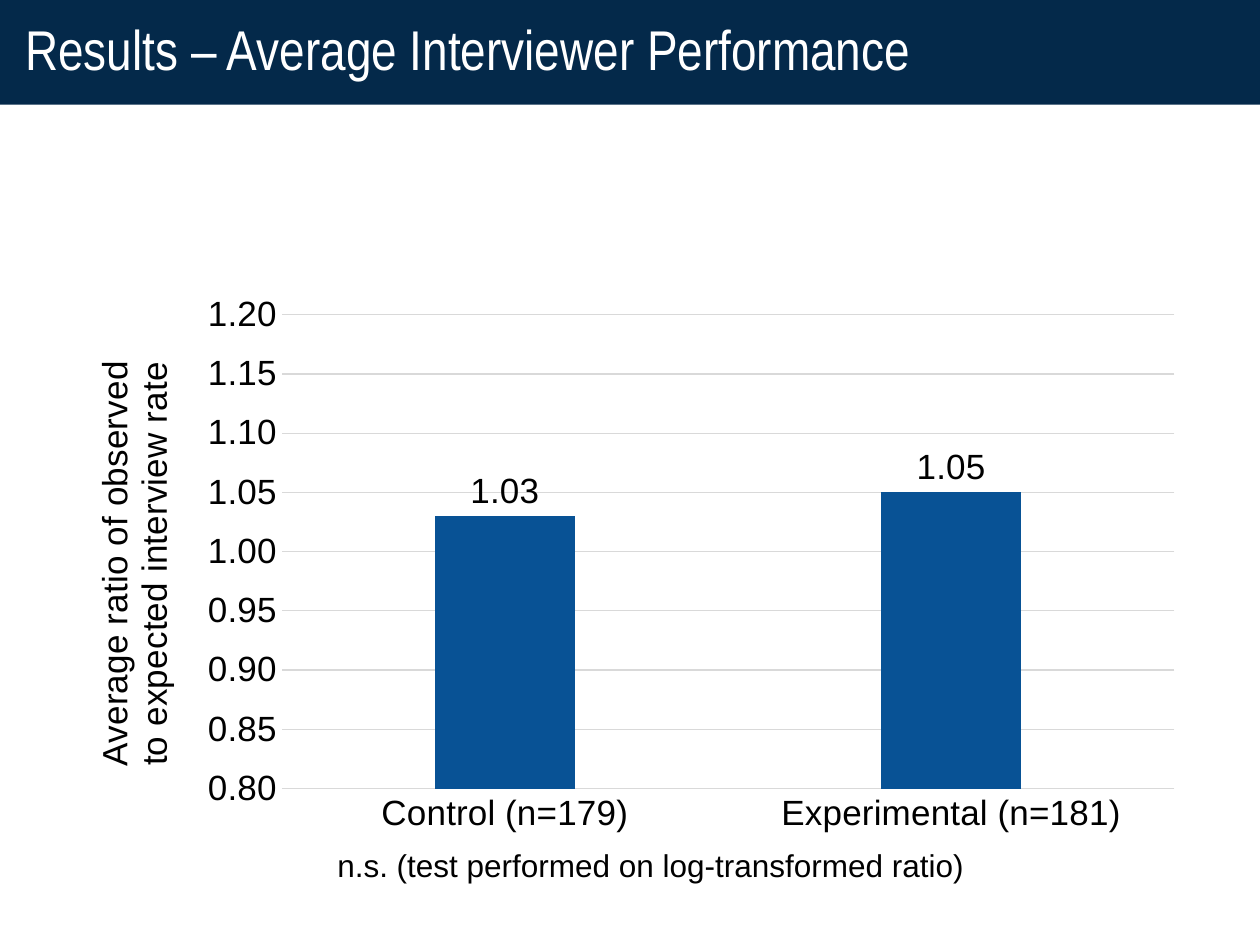
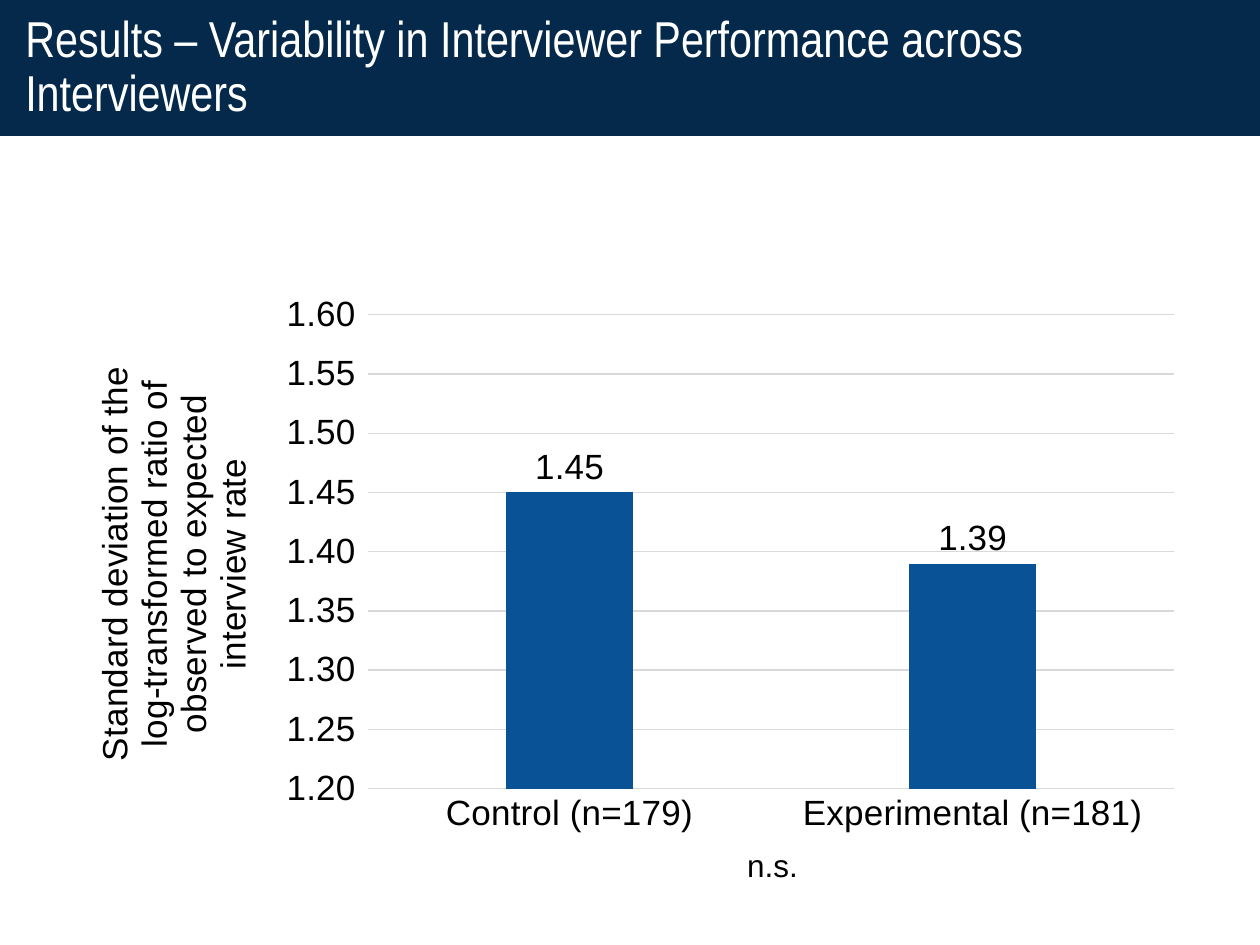
from pptx import Presentation
from pptx.chart.data import CategoryChartData
from pptx.dml.color import RGBColor
from pptx.enum.chart import XL_CHART_TYPE, XL_LABEL_POSITION, XL_TICK_MARK
from pptx.enum.text import MSO_ANCHOR, MSO_AUTO_SIZE, PP_ALIGN
from pptx.util import Cm, Pt

COLUMN = XL_CHART_TYPE.COLUMN_CLUSTERED
ABOVE = XL_LABEL_POSITION.OUTSIDE_END
NO_TICK = XL_TICK_MARK.NONE
OUT_TICK = XL_TICK_MARK.OUTSIDE
MIDDLE = MSO_ANCHOR.MIDDLE
NO_FIT = MSO_AUTO_SIZE.NONE
GROW = MSO_AUTO_SIZE.SHAPE_TO_FIT_TEXT
LEFT = PP_ALIGN.LEFT

NAVY, BLUE, GRID = "04294A", "085295", "D9D9D9"
WHITE, BLACK = "FFFFFF", "000000"
BODY, HEAD = "Arial", "Arial Narrow"
WIDE, HIGH = 25.4, 19.05
PLOT = (1.27, 5.72, 22.86, 11.3)
GROUPS = ("Control (n=179)", "Experimental (n=181)")
FORMAT = "#,##0.00"


def color(code):
    return RGBColor.from_string(code)


def style(font, size, code=BLACK, face=BODY):
    font.size = Pt(size)
    font.name = face
    font.bold = False
    font.color.rgb = color(code)


def rule(line):
    line.color.rgb = color(GRID)
    line.width = Pt(0.75)


def place(shape, box):
    shape.left, shape.top, shape.width, shape.height = map(Cm, box)


def add_band(slide, text, high, size):
    band = slide.shapes.title
    place(band, (0, 0, WIDE, high))
    band.fill.solid()
    band.fill.fore_color.rgb = color(NAVY)
    frame = band.text_frame
    frame.text = text
    frame.auto_size = NO_FIT
    frame.word_wrap = True
    frame.vertical_anchor = MIDDLE
    frame.margin_left = frame.margin_right = Cm(0.51)
    frame.margin_top = frame.margin_bottom = Cm(0.25)
    para = frame.paragraphs[0]
    para.alignment = LEFT
    para.line_spacing = 0.9
    style(para.runs[0].font, size, WHITE, HEAD)


def add_bars(slide, box, label, values, low, top, tick):
    data = CategoryChartData(number_format=FORMAT)
    data.categories = GROUPS
    data.add_series("Series 1", values)
    chart = slide.shapes.add_chart(COLUMN, *map(Cm, box), data).chart
    chart.has_title = chart.has_legend = False
    style(chart.font, 20)

    plot = chart.plots[0]
    plot.gap_width, plot.overlap = 219, -27
    plot.vary_by_categories = False
    fill = plot.series[0].format.fill
    fill.solid()
    fill.fore_color.rgb = color(BLUE)
    plot.has_data_labels = True
    tags = plot.data_labels
    tags.show_value = True
    tags.number_format, tags.number_format_is_linked = FORMAT, False
    tags.position = ABOVE
    style(tags.font, 20)

    base, scale = chart.category_axis, chart.value_axis
    for axis, mark in ((base, NO_TICK), (scale, tick)):
        axis.major_tick_mark = mark
        axis.minor_tick_mark = NO_TICK
        style(axis.tick_labels.font, 20)
    rule(base.format.line)
    scale.format.line.fill.background()
    scale.minimum_scale, scale.maximum_scale = low, top
    scale.major_unit = 0.05
    scale.has_major_gridlines = True
    rule(scale.major_gridlines.format.line)
    scale.tick_labels.number_format = FORMAT
    scale.tick_labels.number_format_is_linked = False
    frame = scale.axis_title.text_frame
    frame.text = label
    style(frame.paragraphs[0].runs[0].font, 20)


def add_note(slide, box, text):
    frame = slide.shapes.add_textbox(*map(Cm, box)).text_frame
    frame.text = text
    frame.word_wrap = True
    frame.auto_size = GROW
    style(frame.paragraphs[0].runs[0].font, 18)


def add_result(deck, title, bars, note):
    slide = deck.slides.add_slide(deck.slide_layouts[5])
    add_band(slide, *title)
    add_bars(slide, PLOT, *bars)
    left, wide, text = note
    add_note(slide, (left, 16.94, wide, 1.03), text)


def main():
    deck = Presentation()
    deck.slide_width, deck.slide_height = Cm(WIDE), Cm(HIGH)
    add_result(
        deck,
        ("Results – Average Interviewer Performance", 2.11, 32),
        ("Average ratio of observed to expected interview rate",
         (1.03, 1.05), 0.8, 1.2, NO_TICK),
        (6.55, 15.27, "n.s. (test performed on log-transformed ratio)"),
    )
    add_result(
        deck,
        ("Results – Variability in Interviewer Performance across Interviewers",
         2.74, 28.8),
        ("Standard deviation of the log-transformed ratio of observed "
         "to expected interview rate",
         (1.45, 1.39), 1.2, 1.6, OUT_TICK),
        (14.81, 2.34, "n.s."),
    )
    deck.save("out.pptx")


if __name__ == "__main__":
    main()
